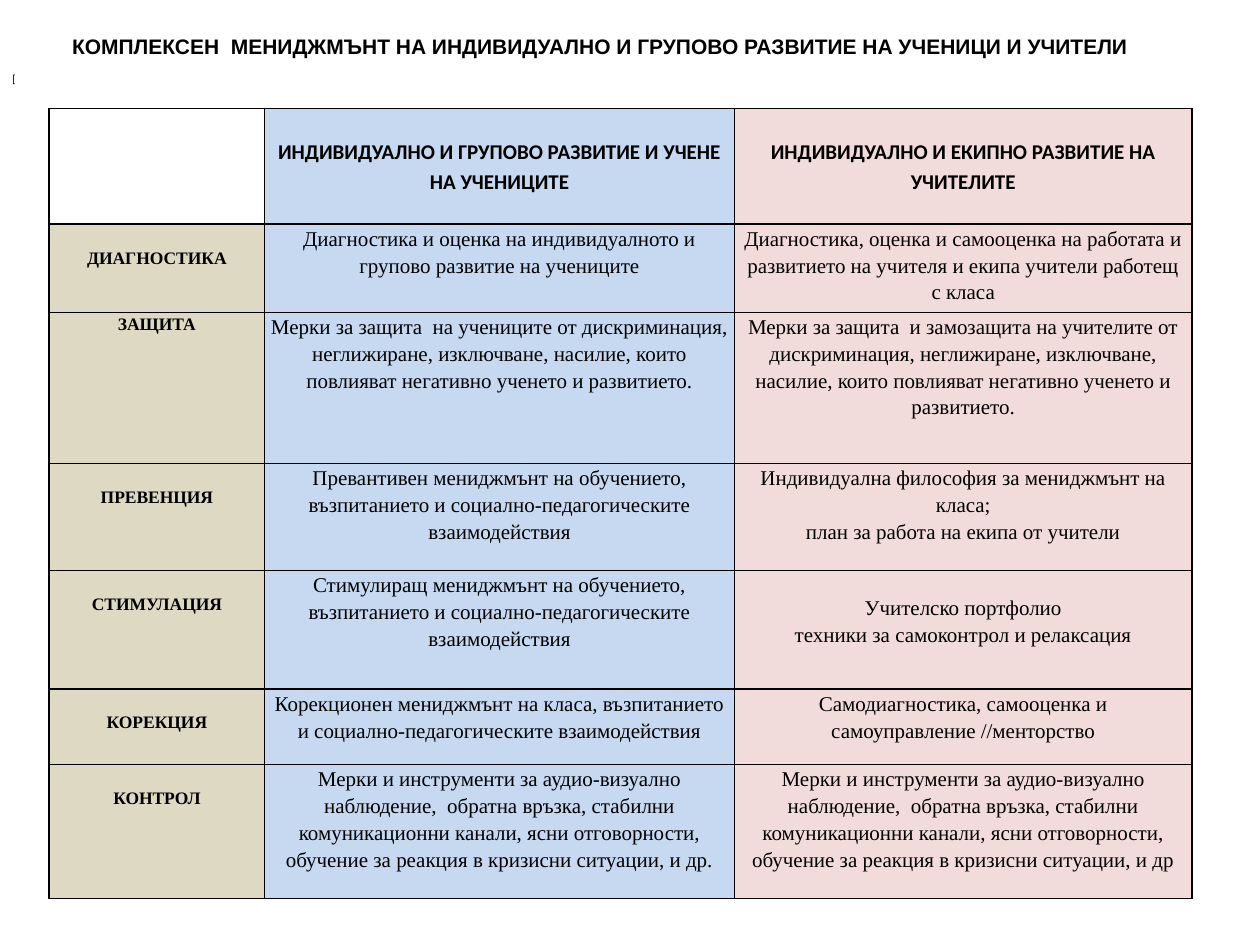
"""Builds a slide with a table on managing the development of pupils and teachers."""
from dataclasses import dataclass

from lxml import etree
from pptx import Presentation
from pptx.dml.color import RGBColor
from pptx.enum import text
from pptx.oxml import ns
from pptx.util import Inches, Pt

BLACK, SAND, BLUE, PINK = "000000", "DDD9C3", "C6D9F1", "F2DCDB"
SERIF = "Times New Roman"
COLUMN_WIDTHS = (1.71, 3.73, 3.63)


@dataclass(frozen=True)
class CellStyle:
    fill: str
    font: str = SERIF
    size: int = 12
    bold: bool = False
    top: float = 0


@dataclass(frozen=True)
class Stage:
    height: float
    name: str
    pupils: str
    teachers: str
    name_top: float = 0.17
    teachers_top: float = 0


STAGES = (
    Stage(0.7, "ДИАГНОСТИКА",
          "Диагностика и оценка на индивидуалното и групово развитие на учениците",
          "Диагностика, оценка и самооценка на работата и развитието на учителя и екипа "
          "учители работещ с класа"),
    Stage(1.2, "ЗАЩИТА",
          "Мерки за защита  на учениците от дискриминация, неглижиране, изключване, "
          "насилие, които повлияват негативно ученето и развитието.",
          "Мерки за защита  и замозащита на учителите от дискриминация, неглижиране, "
          "изключване, насилие, които повлияват негативно ученето и развитието.",
          name_top=0),
    Stage(0.85, "ПРЕВЕНЦИЯ",
          "Превантивен мениджмънт на обучението, възпитанието и социално-педагогическите "
          "взаимодействия",
          "Индивидуална философия за мениджмънт на класа;\nплан за работа на екипа от учители"),
    Stage(0.94, "СТИМУЛАЦИЯ",
          "Стимулиращ мениджмънт на обучението, възпитанието и социално-педагогическите "
          "взаимодействия",
          "Учителско портфолио\nтехники за самоконтрол и релаксация",
          teachers_top=0.18),
    Stage(0.6, "КОРЕКЦИЯ",
          "Корекционен мениджмънт на класа, възпитанието и социално-педагогическите "
          "взаимодействия",
          "Самодиагностика, самооценка и самоуправление //менторство"),
    Stage(1.06, "КОНТРОЛ",
          "Мерки и инструменти за аудио-визуално наблюдение,  обратна връзка, стабилни "
          "комуникационни канали, ясни отговорности, обучение за реакция в кризисни "
          "ситуации, и др.",
          "Мерки и инструменти за аудио-визуално наблюдение,  обратна връзка, стабилни "
          "комуникационни канали, ясни отговорности, обучение за реакция в кризисни "
          "ситуации, и др"),
)


def rgb(value: str) -> RGBColor:
    return RGBColor.from_string(value)


def format_text(tf, font: str, size: int, bold: bool, align, spacing: float = 1) -> None:
    for p in tf.paragraphs:
        p.alignment = align
        p.line_spacing = spacing
        for r in p.runs:
            r.font.name = font
            r.font.size = Pt(size)
            r.font.bold = bold
            r.font.color.rgb = rgb(BLACK)


def add_borders(cell) -> None:
    tc_pr = cell._tc.get_or_add_tcPr()
    for i, side in enumerate(("a:lnL", "a:lnR", "a:lnT", "a:lnB")):
        ln = etree.Element(ns.qn(side), w=str(Pt(1)))
        fill = etree.SubElement(ln, ns.qn("a:solidFill"))
        etree.SubElement(fill, ns.qn("a:srgbClr"), val=BLACK)
        tc_pr.insert(i, ln)


def fill_cell(cell, words: str, style: CellStyle) -> None:
    cell.text_frame.text = words
    cell.margin_left = cell.margin_right = Inches(0.05)
    cell.margin_top, cell.margin_bottom = Inches(style.top), 0
    cell.fill.solid()
    cell.fill.fore_color.rgb = rgb(style.fill)
    format_text(cell.text_frame, style.font, style.size, style.bold,
                text.PP_ALIGN.CENTER, 1.15)


def add_stage_table(s) -> None:
    heights = [0.92] + [stage.height for stage in STAGES]
    frame = s.shapes.add_table(len(heights), len(COLUMN_WIDTHS), Inches(0.39), Inches(0.86),
                               Inches(sum(COLUMN_WIDTHS)), Inches(sum(heights)))
    table = frame.table
    table.first_row = table.horz_banding = False
    for column, width in zip(table.columns, COLUMN_WIDTHS):
        column.width = Inches(width)
    for row, height in zip(table.rows, heights):
        row.height = Inches(height)

    table.cell(0, 0).fill.background()
    headings = (("ИНДИВИДУАЛНО И ГРУПОВО РАЗВИТИЕ И УЧЕНЕ НА УЧЕНИЦИТЕ", BLUE),
                ("ИНДИВИДУАЛНО И ЕКИПНО РАЗВИТИЕ НА УЧИТЕЛИТЕ", PINK))
    for col, (words, color) in enumerate(headings, 1):
        fill_cell(table.cell(0, col), words, CellStyle(color, "Calibri", bold=True, top=0.22))
    for row, stage in enumerate(STAGES, 1):
        fill_cell(table.cell(row, 0), stage.name,
                  CellStyle(SAND, size=10, bold=True, top=stage.name_top))
        fill_cell(table.cell(row, 1), stage.pupils, CellStyle(BLUE))
        fill_cell(table.cell(row, 2), stage.teachers, CellStyle(PINK, top=stage.teachers_top))
    for cell in table.iter_cells():
        add_borders(cell)


def place_text(sp, words: str, box: tuple, size: int, bold: bool, align) -> None:
    sp.left, sp.top, sp.width, sp.height = map(Inches, box)
    tf = sp.text_frame
    tf.text = words
    tf.word_wrap = False
    tf.auto_size = text.MSO_AUTO_SIZE.NONE
    tf.vertical_anchor = text.MSO_ANCHOR.MIDDLE
    format_text(tf, "Arial", size, bold, align)


def main() -> None:
    prs = Presentation()
    prs.slide_width, prs.slide_height = Inches(10), Inches(7.5)
    s = prs.slides.add_slide(prs.slide_layouts[5])
    place_text(s.shapes.title,
               "КОМПЛЕКСЕН  МЕНИДЖМЪНТ НА ИНДИВИДУАЛНО И ГРУПОВО РАЗВИТИЕ НА УЧЕНИЦИ И УЧИТЕЛИ",
               (0, 0.21, 9.53, 0.31), 12, True, text.PP_ALIGN.CENTER)
    add_stage_table(s)
    bracket = s.shapes.add_textbox(0, 0, 0, 0)
    place_text(bracket, "[", (0, 0.51, 0.23, 0.27), 10, False, text.PP_ALIGN.LEFT)
    r = bracket.text_frame.paragraphs[0].runs[0]
    r.font._element.set("baseline", "30000")
    prs.save("out.pptx")


if __name__ == "__main__":
    main()
